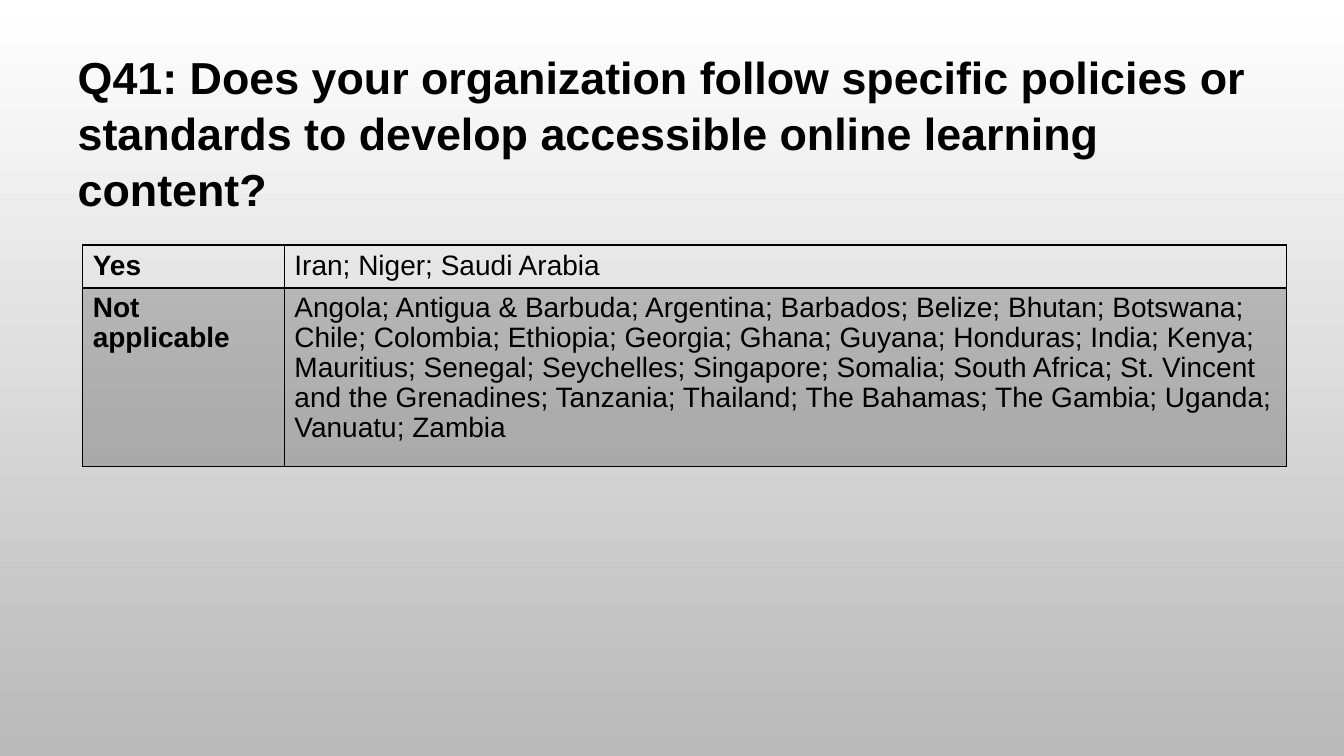
from lxml.etree import SubElement
from pptx import Presentation
from pptx.dml.color import RGBColor
from pptx.enum.text import MSO_ANCHOR, MSO_AUTO_SIZE, PP_ALIGN
from pptx.oxml.ns import qn
from pptx.util import Inches, Pt

COLORS = {"ink": "000000", "bg_top": "FFFFFF", "bg_bottom": "B9B9B9"}
QUESTION = ("Q41: Does your organization follow specific policies or standards "
            "to develop accessible online learning content?")
ANSWERS = [
    ("Yes", ["Iran; Niger; Saudi Arabia"]),
    ("Not applicable", [
        "Angola; Antigua & Barbuda; Argentina; Barbados; Belize; Bhutan; Botswana;",
        "Chile; Colombia; Ethiopia; Georgia; Ghana; Guyana; Honduras; India; Kenya;",
        "Mauritius; Senegal; Seychelles; Singapore; Somalia; South Africa; St. Vincent "
        "and the Grenadines; Tanzania; Thailand; The Bahamas; The Gambia; Uganda;",
        "Vanuatu; Zambia",
    ]),
]
ROW_FORMATS = [
    {"height": 0.43, "bottom": 2, "spacing": 1.0, "shaded": False},
    {"height": 1.77, "bottom": 1, "spacing": 0.96, "shaded": True},
]


def format_paragraph(p, size, bold, spacing):
    p.alignment = PP_ALIGN.LEFT
    p.line_spacing = spacing
    for name, value in {"name": "Arial", "size": Pt(size), "bold": bold}.items():
        setattr(p.font, name, value)
    p.font.color.rgb = RGBColor.from_string(COLORS["ink"])


def add_borders(cell, widths):
    """Draw solid cell borders; widths maps each side to points."""
    tc_pr = cell._tc.get_or_add_tcPr()
    for side, width in widths.items():
        ln = SubElement(tc_pr, qn(f"a:ln{side}"), w=str(Pt(width)))
        fill = SubElement(ln, qn("a:solidFill"))
        SubElement(fill, qn("a:srgbClr"), val=COLORS["ink"])


prs = Presentation()
prs.slide_width, prs.slide_height = Inches(13.33), Inches(7.5)
s = prs.slides.add_slide(prs.slide_layouts[5])

bg = s.background.fill
bg.gradient()
bg.gradient_angle = 270
for stop, position, color in zip(bg.gradient_stops, (0, 1), ("bg_top", "bg_bottom")):
    stop.position = position
    stop.color.rgb = RGBColor.from_string(COLORS[color])

title = s.shapes.title
title.left, title.top = Inches(0.67), Inches(0.42)
title.width, title.height = Inches(12.08), Inches(2.26)
tf = title.text_frame
tf.text = QUESTION
tf.word_wrap = True
tf.auto_size = MSO_AUTO_SIZE.NONE
tf.vertical_anchor = MSO_ANCHOR.TOP
format_paragraph(tf.paragraphs[0], 32, True, 1.04)

table = s.shapes.add_table(2, 2, Inches(0.82), Inches(2.43),
                           Inches(11.94), Inches(2.2)).table
table.first_row = table.horz_banding = False
for column, width in zip(table.columns, (2, 9.94)):
    column.width = Inches(width)

for i, ((answer, countries), fmt) in enumerate(zip(ANSWERS, ROW_FORMATS)):
    table.rows[i].height = Inches(fmt["height"])
    for j, lines in enumerate(([answer], countries)):
        cell = table.cell(i, j)
        cell.text = "\n".join(lines)
        for p in cell.text_frame.paragraphs:
            format_paragraph(p, 20, j == 0, fmt["spacing"])
        top = ROW_FORMATS[i - 1]["bottom"] if i else 1
        add_borders(cell, {"L": 1, "R": 1, "T": top, "B": fmt["bottom"]})
        if fmt["shaded"]:
            cell.fill.solid()
            cell.fill.fore_color.rgb = RGBColor.from_string(COLORS["ink"])
            tint = cell._tc.tcPr.find(qn("a:solidFill")).find(qn("a:srgbClr"))
            SubElement(tint, qn("a:alpha"), val="20000")
        else:
            cell.fill.background()

prs.save("out.pptx")
